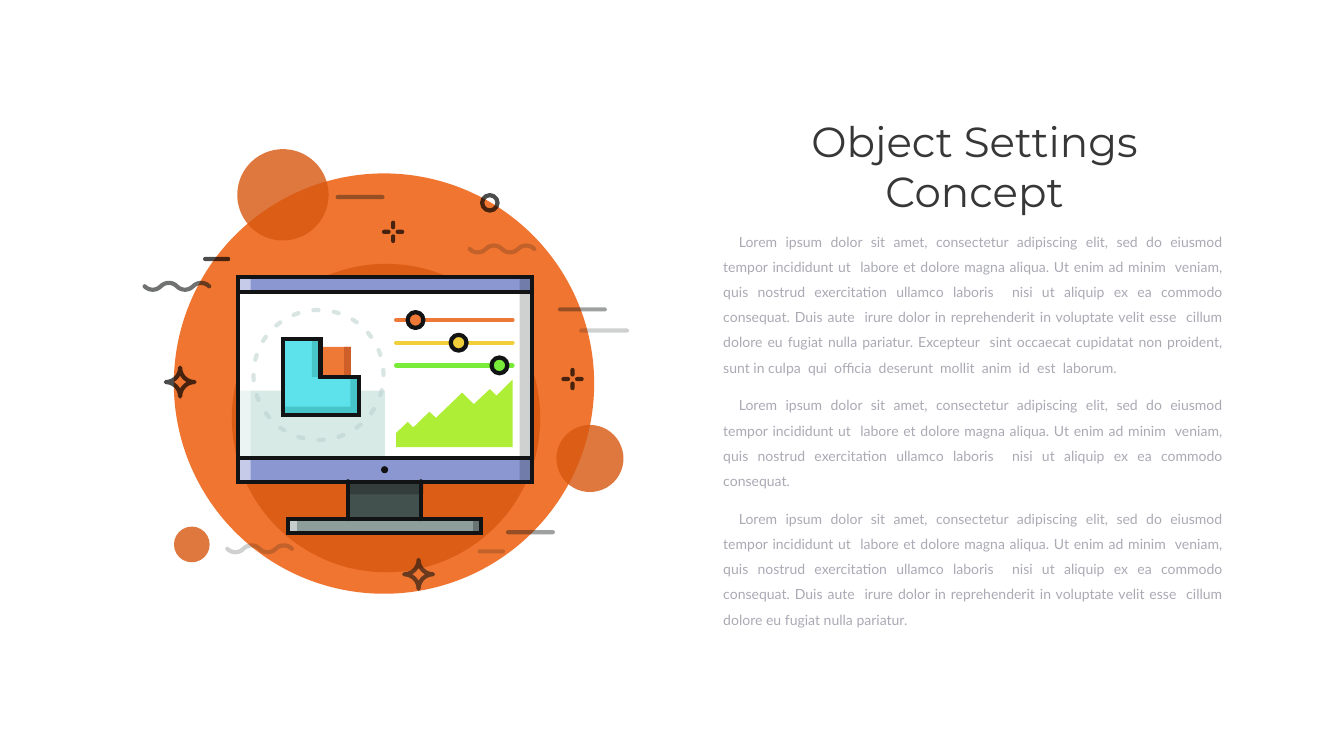
"""Build the Object Settings Concept slide with its monitor illustration."""
import math
from dataclasses import dataclass
from typing import Optional

import lxml.etree
import pptx
import pptx.dml.color
import pptx.enum.shapes
import pptx.enum.text
import pptx.oxml.ns
import pptx.util

Pt = pptx.util.Pt
RGBColor = pptx.dml.color.RGBColor
MSO_SHAPE = pptx.enum.shapes.MSO_SHAPE
qn = pptx.oxml.ns.qn

ORANGE = RGBColor(0xF0, 0x75, 0x30)
RUST = RGBColor(0xD7, 0x57, 0x10)
PERIWINKLE = RGBColor(0x8B, 0x97, 0xD1)
STAND_GREY = RGBColor(0x8D, 0x9E, 0x9B)
NECK_GREY = RGBColor(0x43, 0x51, 0x4E)
WHITE = RGBColor(0xFF, 0xFF, 0xFF)
MINT = RGBColor(0xD7, 0xEA, 0xE6)
ORBIT_GREEN = RGBColor(0xB8, 0xD1, 0xCD)
SHADE = RGBColor(0x11, 0x14, 0x15)
INK = RGBColor(0x11, 0x13, 0x15)
BLACK = RGBColor(0, 0, 0)
LIME = RGBColor(0xAF, 0xEE, 0x37)
TANGERINE = RGBColor(0xEE, 0x78, 0x35)
BURNT = RGBColor(0xCE, 0x5F, 0x28)
YELLOW = RGBColor(0xF1, 0xCF, 0x3A)
GREEN = RGBColor(0x78, 0xEC, 0x39)
CYAN = RGBColor(0x5D, 0xE2, 0xEC)
TEAL = RGBColor(0x48, 0xC5, 0xC8)
TITLE_GREY = RGBColor(0x37, 0x37, 0x37)
BODY_GREY = RGBColor(0xAA, 0xAA, 0xB5)

STROKE = 6
OPENING = ("Lorem ipsum dolor sit amet, consectetur adipiscing elit, sed do eiusmod tempor "
           "incididunt ut  labore et dolore magna aliqua. Ut enim ad minim  veniam, quis nostrud "
           "exercitation ullamco laboris  nisi ut aliquip ex ea commodo consequat.")
MIDDLE = (" Duis aute  irure dolor in reprehenderit in voluptate velit esse  cillum dolore "
          "eu fugiat nulla pariatur.")
ENDING = (" Excepteur  sint occaecat cupidatat non proident, sunt in culpa  qui  officia  "
          "deserunt  mollit  anim  id  est  laborum.")

Point = tuple[float, float]


@dataclass(frozen=True)
class Paint:
    color: RGBColor
    opacity: int = 100


@dataclass(frozen=True)
class Box:
    left: float
    top: float
    width: float
    height: float


@dataclass(frozen=True)
class Slider:
    color: RGBColor
    knob_x: float


OUTLINE = Paint(INK)


def apply_paint(fill, paint: Paint, parent) -> None:
    fill.solid()
    fill.fore_color.rgb = paint.color
    if paint.opacity < 100:
        color = parent.find(qn("a:solidFill")).find(qn("a:srgbClr"))
        lxml.etree.SubElement(color, qn("a:alpha")).set("val", str(paint.opacity * 1000))


def apply_stroke(shape, paint: Paint, sharp: bool = False) -> None:
    shape.line.width = Pt(STROKE)
    shape.line.fill.solid()
    line = shape.element.spPr.find(qn("a:ln"))
    apply_paint(shape.line.fill, paint, line)
    line.set("cap", "rnd")
    join = lxml.etree.SubElement(line, qn("a:miter" if sharp else "a:round"))
    if sharp:
        join.set("lim", "800000")


def finish(shape, fill: Optional[Paint], stroke: Optional[Paint], sharp: bool = False) -> None:
    shape.shadow.inherit = False
    if fill:
        apply_paint(shape.fill, fill, shape.element.spPr)
    else:
        shape.fill.background()
    if stroke:
        apply_stroke(shape, stroke, sharp)
    else:
        shape.line.fill.background()


def draw_rect(slide, box: Box, fill: Optional[Paint], stroke: Optional[Paint] = None) -> None:
    shape = slide.shapes.add_shape(MSO_SHAPE.RECTANGLE, Pt(box.left), Pt(box.top),
                                   Pt(box.width), Pt(box.height))
    finish(shape, fill, stroke, True)


def draw_disc(slide, center: Point, diameter: float, fill: Optional[Paint],
              stroke: Optional[Paint] = None) -> None:
    shape = slide.shapes.add_shape(MSO_SHAPE.OVAL, Pt(center[0] - diameter / 2),
                                   Pt(center[1] - diameter / 2), Pt(diameter), Pt(diameter))
    finish(shape, fill, stroke)


def draw_line(slide, start: Point, end: Point, paint: Paint) -> None:
    line = slide.shapes.add_connector(pptx.enum.shapes.MSO_CONNECTOR.STRAIGHT,
                                      Pt(start[0]), Pt(start[1]), Pt(end[0]), Pt(end[1]))
    apply_stroke(line, paint)
    lxml.etree.SubElement(line.element.spPr, qn("a:effectLst"))


def draw_outline(slide, points: list[Point], fill: Optional[Paint],
                 stroke: Optional[Paint] = None, close: bool = True, sharp: bool = False) -> None:
    corners = [(Pt(x), Pt(y)) for x, y in points]
    builder = slide.shapes.build_freeform(*corners[0])
    builder.add_line_segments(corners[1:], close=close)
    finish(builder.convert_to_shape(), fill, stroke, sharp)


def curve(a: Point, b: Point, c: Point, d: Point, steps: int = 12) -> list[Point]:
    points = []
    for step in range(steps + 1):
        t = step / steps
        weights = ((1 - t) ** 3, 3 * t * (1 - t) ** 2, 3 * t * t * (1 - t), t ** 3)
        points.append(tuple(sum(w * p[axis] for w, p in zip(weights, (a, b, c, d)))
                            for axis in (0, 1)))
    return points


def draw_wave(slide, x: float, y: float, paint: Paint) -> None:
    arch, handle = 23.05, 6.5
    points = []
    for index in range(4):
        left, right = x + index * arch, x + (index + 1) * arch
        bend = y + handle * (-1) ** index
        points += curve((left, y), (left + handle, bend), (right - handle, bend), (right, y))
    draw_outline(slide, points, None, paint, close=False)


def draw_sparkle(slide, x: float, y: float, paint: Paint) -> None:
    radius, handle = 20.7, 9.3
    points = []
    for index in range(4):
        (ax, ay), (bx, by) = [(round(math.cos(angle)), round(math.sin(angle)))
                              for angle in (index * math.pi / 2, (index + 1) * math.pi / 2)]
        points += curve((x + ax * radius, y + ay * radius), (x + ax * handle, y + ay * handle),
                        (x + bx * handle, y + by * handle), (x + bx * radius, y + by * radius))
    draw_outline(slide, points, None, paint)


def draw_cross(slide, x: float, y: float, paint: Paint) -> None:
    for dx, dy in ((0, -1), (-1, 0), (0, 1), (1, 0)):
        draw_line(slide, (x + dx * 6.5, y + dy * 6.5), (x + dx * 13, y + dy * 13), paint)


def draw_backdrop(slide) -> None:
    draw_disc(slide, (548.6, 548), 600.5, Paint(ORANGE))
    for center, diameter in (((551.5, 597.2), 440.6), ((404.2, 278.3), 130.4),
                             ((842.8, 655), 95.8), ((274, 777.8), 51)):
        draw_disc(slide, center, diameter, Paint(RUST, 80))


def draw_monitor(slide) -> None:
    stand = Box(411, 741.6, 276.5, 20.2)
    for box, paint in (
        (Box(340, 654.5, 420, 33), Paint(PERIWINKLE)),
        (stand, Paint(STAND_GREY)),
        (Box(340, 396, 420, 21), Paint(PERIWINKLE)),
        (Box(497.5, 687.6, 103.7, 54), Paint(NECK_GREY)),
        (Box(497.5, 688.3, 107.3, 18), Paint(SHADE, 30)),
        (Box(340, 417, 420, 237.5), Paint(WHITE)),
        (Box(340, 558, 210, 96.5), Paint(MINT)),
        (Box(340, 396, 18, 293), Paint(WHITE, 50)),
        (Box(411, 741.6, 13, 18.7), Paint(WHITE, 50)),
        (Box(742.3, 396, 17.5, 293), Paint(SHADE, 20)),
        (Box(676, 744.5, 12.2, 17.3), Paint(SHADE, 30)),
    ):
        draw_rect(slide, box, paint)
    draw_rect(slide, Box(340, 396, 420, 292.3), None, OUTLINE)
    for y in (417, 654.5):
        draw_line(slide, (340, y), (760, y), OUTLINE)
    for x in (497.5, 601.2):
        draw_line(slide, (x, 687.6), (x, 741.6), OUTLINE)
    draw_rect(slide, stand, None, OUTLINE)
    draw_disc(slide, (549.4, 671), 10, OUTLINE)


def draw_screen(slide) -> None:
    draw_outline(slide, [(709.2, 565.2), (699.8, 555.8), (676.8, 577.4), (660.2, 560.9),
                         (622.8, 596.9), (613.4, 588.2), (590.4, 610.6), (582.5, 602.6),
                         (565.9, 618.5), (565.9, 638.6), (732.2, 638.6), (732.2, 542.2)],
                 Paint(LIME))
    for row, slider in enumerate((Slider(TANGERINE, 593.6), Slider(YELLOW, 655.2),
                                  Slider(GREEN, 713.5))):
        y = 457.2 + row * 32.4
        draw_line(slide, (565.9, y), (732.2, y), Paint(slider.color))
        draw_disc(slide, (slider.knob_x, y), 22.6, Paint(slider.color), OUTLINE)
    for index in range(20):
        dash = [(455 + 92.9 * math.sin(angle), 535.7 - 92.9 * math.cos(angle))
                for angle in (math.radians(index * 18 - 4.5), math.radians(index * 18))]
        draw_line(slide, *dash, Paint(ORBIT_GREEN, 54))
    draw_rect(slide, Box(457.9, 495.4, 43.2, 43.2), Paint(TANGERINE))
    draw_rect(slide, Box(491.8, 495.4, 9.4, 43.2), Paint(BURNT))
    left, notch, right, top, step, bottom = 403.9, 457.9, 512.6, 484.6, 538.6, 592.6
    corner = [(notch, step), (notch, top), (left, top), (left, bottom),
              (right, bottom), (right, step)]
    draw_outline(slide, corner, Paint(CYAN))
    draw_outline(slide, [(500.4, step), (500.4, 581), (left, 581), (left, bottom),
                         (right, bottom), (right, step)], Paint(TEAL))
    draw_rect(slide, Box(445.7, top, 12.6, step - top), Paint(TEAL))
    draw_outline(slide, corner, None, OUTLINE, sharp=True)


def draw_accents(slide) -> None:
    for x, y, opacity in ((206.6, 409, 60), (324.7, 784, 20), (671, 355.7, 20)):
        draw_wave(slide, x, y, Paint(SHADE, opacity))
    for x, y, length, paint in (
        (725.8, 760.3, 64, Paint(SHADE, 40)), (800, 442, 64, Paint(SHADE, 40)),
        (482.4, 281.5, 64, Paint(SHADE, 40)), (685.4, 787.7, 33, Paint(SHADE, 20)),
        (293, 370, 33, Paint(BLACK, 70)), (830.2, 472.3, 65.5, Paint(SHADE, 20)),
    ):
        draw_line(slide, (x, y), (x + length, y), paint)
    draw_sparkle(slide, 598, 820.4, Paint(SHADE, 60))
    draw_sparkle(slide, 257.4, 545.8, Paint(BLACK, 70))
    draw_cross(slide, 817.9, 541.5, Paint(BLACK, 70))
    draw_cross(slide, 561.6, 331.2, Paint(BLACK, 70))
    draw_disc(slide, (699.8, 289.8), 22, None, Paint(BLACK, 70))


def write_text(placeholder, box: Box, paragraphs: list[str], font: str, size: float,
               color: RGBColor, align) -> None:
    placeholder.left, placeholder.top = Pt(box.left), Pt(box.top)
    placeholder.width, placeholder.height = Pt(box.width), Pt(box.height)
    frame = placeholder.text_frame
    frame.text = "\n".join(paragraphs)
    frame.word_wrap = True
    frame.auto_size = pptx.enum.text.MSO_AUTO_SIZE.NONE
    frame.vertical_anchor = pptx.enum.text.MSO_ANCHOR.TOP
    for paragraph in frame.paragraphs:
        paragraph.alignment = align
        for run in paragraph.runs:
            run.font.name, run.font.size = font, Pt(size)
            run.font.color.rgb = color


def main() -> None:
    deck = pptx.Presentation()
    deck.slide_width, deck.slide_height = Pt(1920), Pt(1080)
    slide = deck.slides.add_slide(deck.slide_layouts[1])
    heading, body = slide.placeholders
    draw_backdrop(slide)
    draw_monitor(slide)
    draw_screen(slide)
    draw_accents(slide)
    align = pptx.enum.text.PP_ALIGN
    write_text(heading, Box(1022.4, 161.3, 739.4, 152.6), ["Object Settings Concept"],
               "Montserrat", 60, TITLE_GREY, align.CENTER)
    write_text(body, Box(1026, 317.5, 728, 552.2),
               [OPENING + MIDDLE + ENDING, OPENING, OPENING + MIDDLE],
               "Lato", 20, BODY_GREY, align.JUSTIFY)
    for paragraph in body.text_frame.paragraphs:
        paragraph.line_spacing, paragraph.space_before = 1.5, Pt(18)
        properties = paragraph.runs[0].font and paragraph.runs[0].text and paragraph
        layout = properties.runs[0].font and body.element.findall(".//" + qn("a:pPr"))
    for settings in layout:
        settings.set("marL", "0")
        settings.set("indent", str(Pt(22.3)))
        lxml.etree.SubElement(settings, qn("a:buNone"))
    deck.save("out.pptx")


if __name__ == "__main__":
    main()
